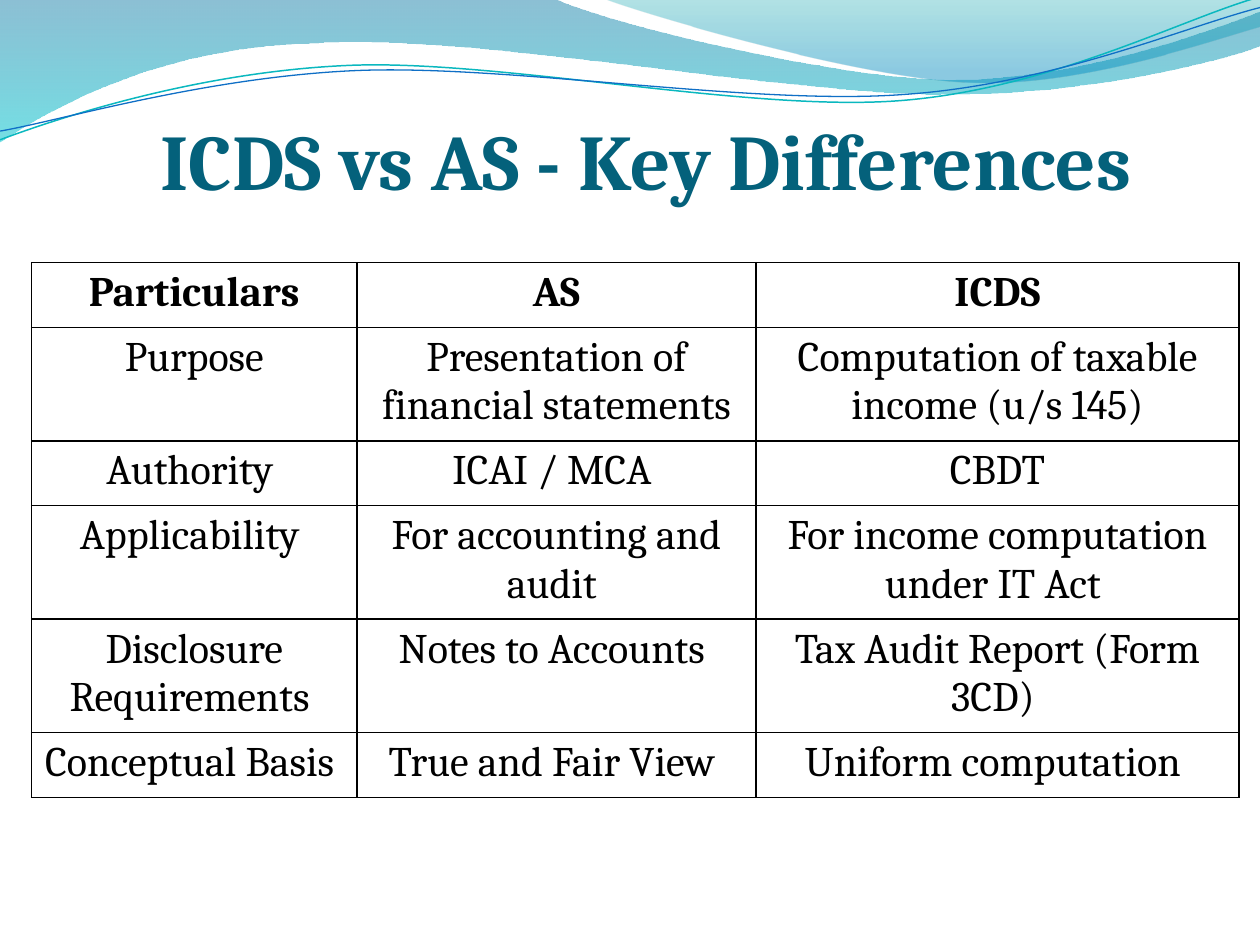
"""Build a slide with a wave header, a title and a table comparing AS with ICDS."""
import pptx
import pptx.dml.color
import pptx.enum.text
import pptx.oxml
import pptx.oxml.ns
import pptx.util
from dataclasses import dataclass

Pt = pptx.util.Pt
RGB = pptx.dml.color.RGBColor.from_string
CENTER = pptx.enum.text.PP_ALIGN.CENTER
NAMESPACE = pptx.oxml.ns.nsdecls("a")
qn = pptx.oxml.ns.qn


@dataclass(frozen=True)
class Theme:
    font: str = "Cambria"
    title_color: str = "04617B"
    body_color: str = "000000"
    title_size: int = 45
    body_size: int = 24
    border_width: int = 1


THEME = Theme()

TITLE = "ICDS vs AS - Key Differences"
COMPARISON = [
    ("Particulars", "AS", "ICDS"),
    ("Purpose", "Presentation of financial statements",
     "Computation of taxable income (u/s 145)"),
    ("Authority ", "ICAI / MCA ", "CBDT"),
    ("Applicability ", "For accounting and audit ",
     "For income computation under IT Act "),
    ("Disclosure Requirements ", "Notes to Accounts ",
     "Tax Audit Report (Form 3CD) "),
    ("Conceptual Basis ", "True and Fair View ", "Uniform computation "),
]
COLUMN_WIDTHS = (186, 228, 276)
ROW_HEIGHT = 37.08
COMPARISON_HEIGHT = 333.4

BANDS = [
    {"steps": [(0, 0), (316.8, -0.7),
               (342.7, 12.2, 478.1, 45.4, 545.8, 45.4),
               (614.2, 45.4, 689.8, 18.7, 720, 6.5),
               (720.7, 25.9),
               (707.8, 31.7, 626.4, 54.7, 537.1, 54),
               (447.8, 54, 275, 20.2, 185, 24.5),
               (92.9, 25.9, 33.1, 59.8, -0.7, 81.4)],
     "stops": [(0, "0074A1", 45), (1, "00C6CF", 55)]},
    {"steps": [(344.9, -0.7),
               (366.5, 7.9, 491, 44.6, 553.7, 46.8),
               (616.3, 49.7, 691.9, 23, 720, 15.1),
               (720, 0)],
     "stops": [(0, "00A1A9", 30), (0.8, "008BBF", 45)]},
]
STRANDS = [
    {"steps": [(0, 79.9),
               (34.6, 67, 113.8, 41, 199.4, 37.4),
               (284.4, 33.8, 427, 64.1, 513.4, 57.6),
               (599.8, 51.1, 675.4, 10.8, 718.6, -1.4)],
     "color": "0AB8BF", "width": 0.85},
    {"steps": [(0, 74.9),
               (33.8, 69.1, 118.1, 43.9, 203.8, 40.3),
               (290.2, 36.7, 429.8, 60.5, 516.2, 54),
               (601.9, 48.2, 677.5, 15.1, 720, 4.3)],
     "color": "0F6FC6", "width": 0.75},
]


def add_outline(slide, steps, close):
    """Draw steps of two numbers as lines and steps of six as Bezier curves."""
    points = [(Pt(x), Pt(y)) for step in steps for x, y in zip(step[::2], step[1::2])]
    builder = slide.shapes.build_freeform(*points[0])
    builder.add_line_segments(points[1:], close=close)
    outline = builder.convert_to_shape()
    outline.shadow.inherit = False
    segments = iter(list(outline._element.iter(qn("a:lnTo"))))
    for step in steps[1:]:
        first = next(segments)
        if len(step) == 6:
            curve = pptx.oxml.parse_xml(f"<a:cubicBezTo {NAMESPACE}/>")
            first.addprevious(curve)
            for segment in (first, next(segments), next(segments)):
                curve.append(segment[0])
                segment.getparent().remove(segment)
    return outline


def add_band(slide, steps, stops):
    band = add_outline(slide, steps, True)
    band.line.fill.background()
    band.fill.gradient()
    band.fill.gradient_angle = 270
    for stop, (position, color, _) in zip(band.fill.gradient_stops, stops):
        stop.position = position
        stop.color.rgb = RGB(color)
    colors = band._element.spPr.iter(qn("a:srgbClr"))
    for color, (_, _, opacity) in zip(list(colors), stops):
        color.append(pptx.oxml.parse_xml(f'<a:alpha {NAMESPACE} val="{opacity * 1000}"/>'))


def add_strand(slide, steps, color, width):
    strand = add_outline(slide, steps, False)
    strand.fill.background()
    strand.line.color.rgb = RGB(color)
    strand.line.width = Pt(width)


def write(frame, text, size, color, bold):
    paragraph = frame.paragraphs[0]
    paragraph.text = text
    paragraph.alignment = CENTER
    font = paragraph.font
    font.name, font.size, font.bold = THEME.font, Pt(size), bold
    font.color.rgb = RGB(color)


def add_title(slide):
    frame = slide.shapes.add_textbox(Pt(42), Pt(42), Pt(654), Pt(76)).text_frame
    frame.word_wrap = True
    frame.vertical_anchor = pptx.enum.text.MSO_ANCHOR.BOTTOM
    frame.margin_left = frame.margin_right = frame.margin_bottom = 0
    write(frame, TITLE, THEME.title_size, THEME.title_color, True)


def set_borders(cell):
    properties = cell._tc.get_or_add_tcPr()
    for index, side in enumerate(("lnL", "lnR", "lnT", "lnB")):
        properties.insert(index, pptx.oxml.parse_xml(
            f'<a:{side} {NAMESPACE} w="{Pt(THEME.border_width)}">'
            f'<a:solidFill><a:srgbClr val="{THEME.body_color}"/></a:solidFill></a:{side}>'))


def add_comparison(slide):
    holder = slide.shapes.add_table(
        len(COMPARISON), len(COLUMN_WIDTHS), Pt(18), Pt(150),
        Pt(sum(COLUMN_WIDTHS)), Pt(COMPARISON_HEIGHT))
    table = holder.table
    table.first_row = table.horz_banding = False
    for column, width in zip(table.columns, COLUMN_WIDTHS):
        column.width = Pt(width)
    for row_index, entries in enumerate(COMPARISON):
        table.rows[row_index].height = Pt(ROW_HEIGHT)
        for column_index, entry in enumerate(entries):
            cell = table.cell(row_index, column_index)
            cell.fill.background()
            set_borders(cell)
            write(cell.text_frame, entry, THEME.body_size, THEME.body_color, row_index == 0)
    holder.height = Pt(COMPARISON_HEIGHT)


def main():
    deck = pptx.Presentation()
    deck.slide_width, deck.slide_height = Pt(720), Pt(540)
    slide = deck.slides.add_slide(deck.slide_layouts[6])
    for band in BANDS:
        add_band(slide, **band)
    for strand in STRANDS:
        add_strand(slide, **strand)
    add_title(slide)
    add_comparison(slide)
    deck.save("out.pptx")


if __name__ == "__main__":
    main()
